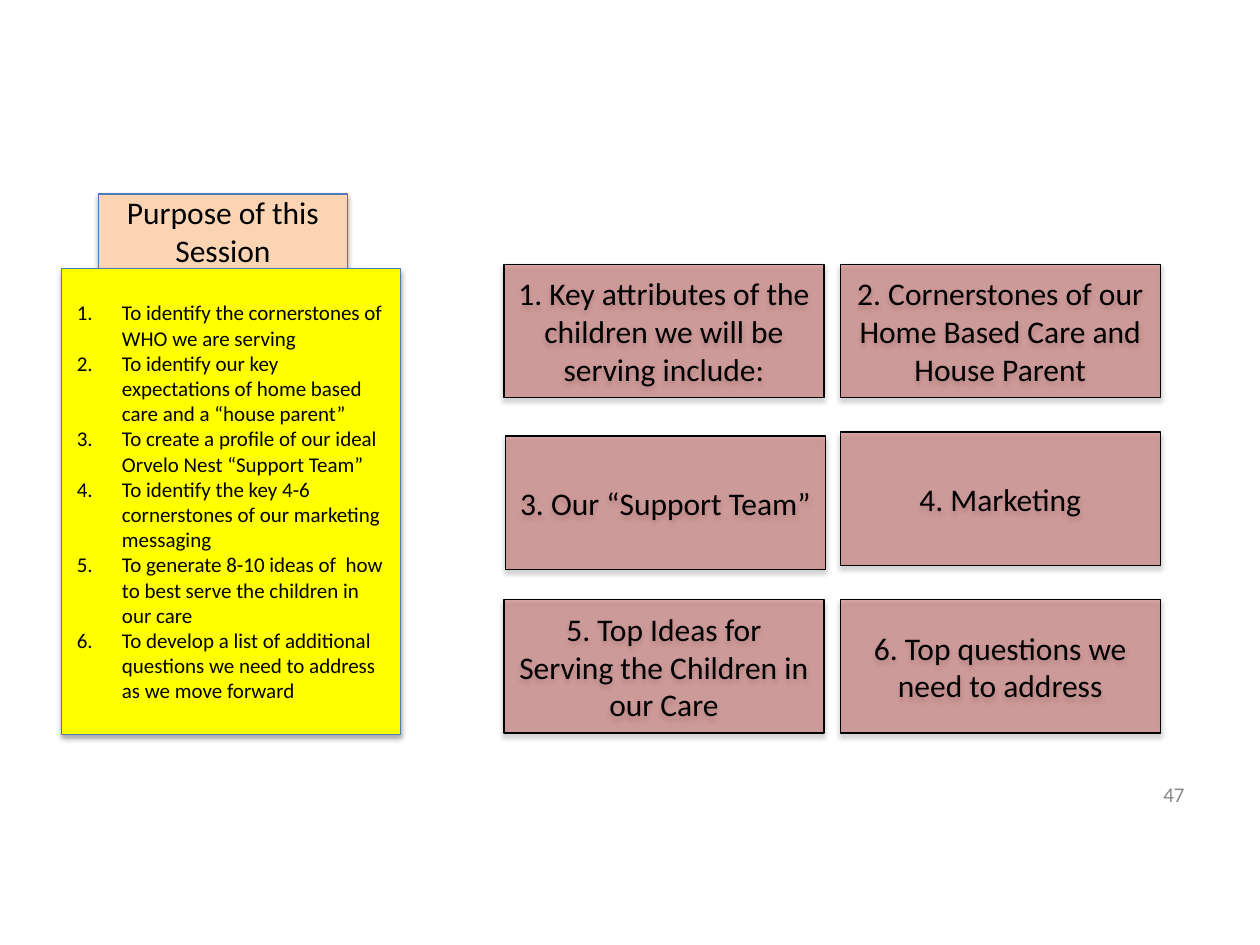
import pptx
import pptx.util
import pptx.dml.color
import pptx.enum.shapes
import pptx.enum.text
import pptx.oxml
import pptx.oxml.ns
from lxml import etree

Cm, Pt = pptx.util.Cm, pptx.util.Pt
ALIGN = pptx.enum.text.PP_ALIGN

TITLE = "Purpose of this Session"
GOALS = [
    "To identify the cornerstones of WHO we are serving",
    "To identify our key expectations of home based care and a “house parent”",
    "To create a profile of our ideal Orvelo Nest “Support Team”",
    "To identify the key 4-6 cornerstones of our marketing messaging",
    "To generate 8-10 ideas of  how to best serve the children in our care",
    "To develop a list of additional questions we need to address as we move forward",
]
TOPICS = [
    "1. Key attributes of the children we will be serving include:",
    "2. Cornerstones of our Home Based Care and House Parent",
    "3. Our “Support Team”",
    "4. Marketing",
    "5. Top Ideas for Serving the Children in our Care",
    "6. Top questions we need to address",
]
PAGE = "47"

THEME = {
    "font": "Calibri", "big": 18, "small": 12,
    "ink": "000000", "gray": "888888", "blue": "4A7DBA",
    "peach": "FBD4B4", "yellow": "FFFF00", "red": "C0504D",
}

# Topic grid, in centimetres
LEFT, TOP = 10.16, 5.33
WIDE, HIGH = 6.45, 2.69
STEP_X, STEP_Y = 6.78, 3.38
NUDGE = {2: (0.03, 0.08)}  # the third topic sits slightly lower


def color(name):
    return pptx.dml.color.RGBColor.from_string(THEME[name])


def add_node(parent, tag, **attrs):
    node = etree.SubElement(parent, pptx.oxml.ns.qn(tag))
    for key, value in attrs.items():
        node.set(key, str(value))
    return node


def write(frame, lines, size, align, ink="ink"):
    """Fill a text frame with one paragraph per line and return the paragraphs."""
    frame.word_wrap = True
    frame.vertical_anchor = pptx.enum.text.MSO_ANCHOR.MIDDLE
    for line in lines[1:]:
        frame.add_paragraph()
    for para, line in zip(frame.paragraphs, lines):
        para.alignment = align
        run = para.add_run()
        run.text = line
        run.font.name = THEME["font"]
        run.font.size = Pt(THEME[size])
        run.font.color.rgb = color(ink)
    return frame.paragraphs


def add_shade(shape):
    shape.shadow.inherit = False
    effects = shape._element.spPr.find(pptx.oxml.ns.qn("a:effectLst"))
    shade = add_node(effects, "a:outerShdw", blurRad=Pt(3.1), dist=Pt(1.8),
                     dir=90 * 60000, rotWithShape=0)
    ink = add_node(shade, "a:srgbClr", val=THEME["ink"])
    add_node(ink, "a:alpha", val=35000)


def add_box(slide, place, fill, line, lines, size="big", align=ALIGN.CENTER, alpha=None):
    box = slide.shapes.add_shape(
        pptx.enum.shapes.MSO_SHAPE.RECTANGLE, *[Cm(side) for side in place])
    box.fill.solid()
    box.fill.fore_color.rgb = color(fill)
    if alpha:
        tint = box._element.spPr.find(".//" + pptx.oxml.ns.qn("a:srgbClr"))
        add_node(tint, "a:alpha", val=alpha * 1000)
    box.line.color.rgb = color(line)
    box.line.width = Pt(0.75)
    add_shade(box)
    return write(box.text_frame, lines, size, align)


def number(para):
    props = para._p.get_or_add_pPr()
    props.set("marL", str(Cm(0.97)))
    props.set("indent", str(Cm(-0.91)))
    tint = add_node(props, "a:buClr")
    add_node(tint, "a:srgbClr", val=THEME["ink"])
    add_node(props, "a:buFont", typeface="+mj-lt")
    add_node(props, "a:buAutoNum", type="arabicPeriod")


def main():
    deck = pptx.Presentation()
    deck.slide_width, deck.slide_height = Cm(25.4), Cm(19.05)
    slide = deck.slides.add_slide(deck.slide_layouts[6])

    add_box(slide, (1.98, 3.91, 5.03, 1.5), "peach", "blue", [TITLE])
    goals = add_box(slide, (1.24, 5.41, 6.83, 9.4), "yellow", "blue",
                    GOALS, "small", ALIGN.LEFT)
    for goal in goals:
        number(goal)

    for index, topic in enumerate(TOPICS):
        row, col = divmod(index, 2)
        dx, dy = NUDGE.get(index, (0, 0))
        place = (LEFT + col * STEP_X + dx, TOP + row * STEP_Y + dy, WIDE, HIGH)
        add_box(slide, place, "red", "ink", [topic], alpha=45)

    page = slide.shapes.add_textbox(Cm(18.21), Cm(15.62), Cm(5.92), Cm(0.76))
    write(page.text_frame, [PAGE], "small", ALIGN.RIGHT, "gray")
    deck.save("out.pptx")


if __name__ == "__main__":
    main()
